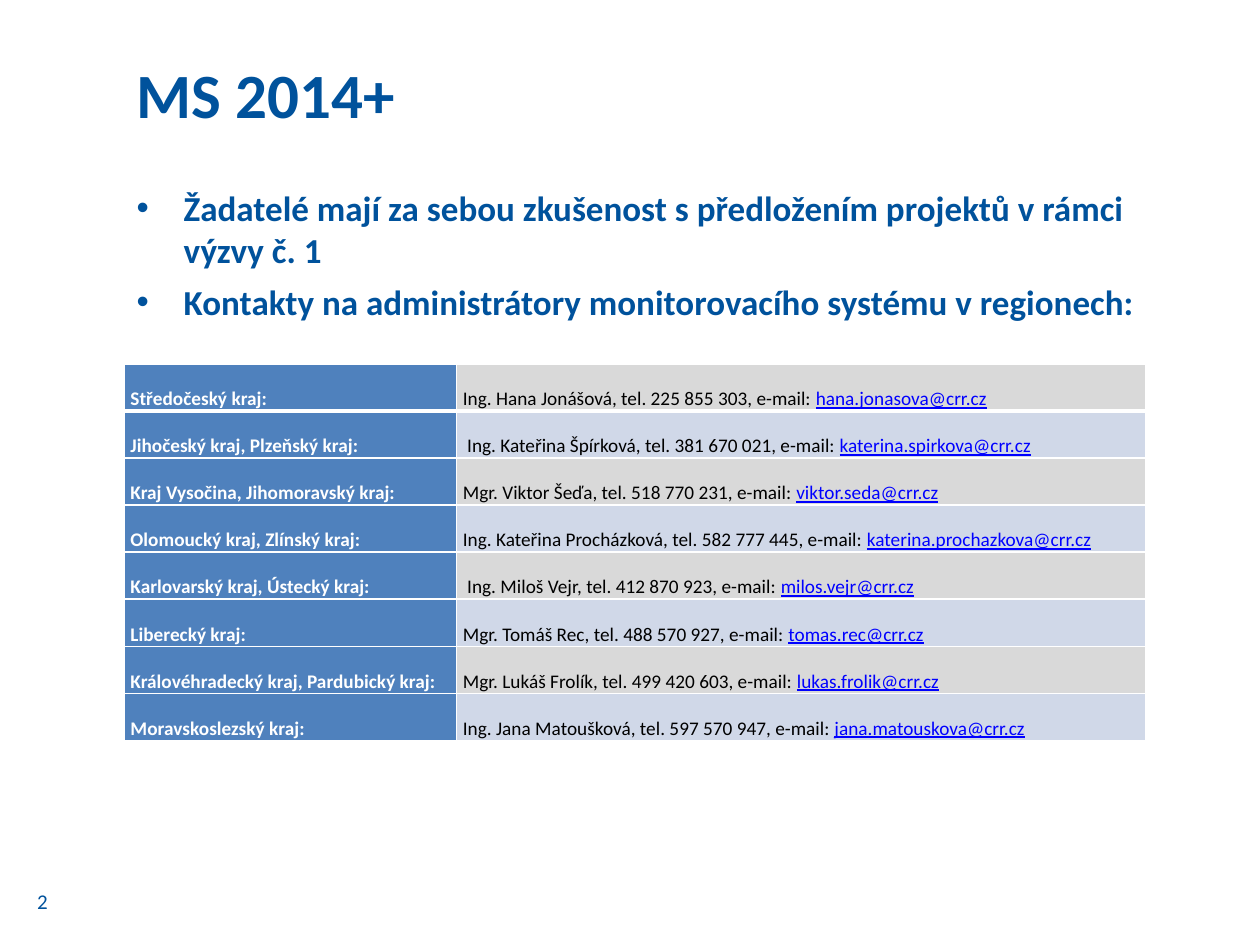
from lxml import etree
from pptx import Presentation
from pptx import util as u
from pptx.dml.color import RGBColor
from pptx.enum import text
from pptx.oxml.ns import qn

BLUE = RGBColor(0x00, 0x52, 0x9C)
HEADER_FILL = RGBColor(0x4F, 0x81, 0xBD)
BAND_FILLS = (RGBColor(0xD9, 0xD9, 0xD9), RGBColor(0xD0, 0xD8, 0xE8))
WHITE = RGBColor(0xFF, 0xFF, 0xFF)
BLACK = RGBColor(0x00, 0x00, 0x00)
LINK_BLUE = RGBColor(0x00, 0x00, 0xFF)

POINTS = (
    "Žadatelé mají za sebou zkušenost s předložením projektů v rámci výzvy č. 1",
    "Kontakty na administrátory monitorovacího systému v regionech:",
)
CONTACTS = (
    ("Středočeský kraj:", "Ing. Hana Jonášová, tel. 225 855 303", "hana.jonasova@crr.cz"),
    ("Jihočeský kraj, Plzeňský kraj:", " Ing. Kateřina Špírková, tel. 381 670 021", "katerina.spirkova@crr.cz"),
    ("Kraj Vysočina, Jihomoravský kraj:", "Mgr. Viktor Šeďa, tel. 518 770 231", "viktor.seda@crr.cz"),
    ("Olomoucký kraj, Zlínský kraj:", "Ing. Kateřina Procházková, tel. 582 777 445", "katerina.prochazkova@crr.cz"),
    ("Karlovarský kraj, Ústecký kraj:", " Ing. Miloš Vejr, tel. 412 870 923", "milos.vejr@crr.cz"),
    ("Liberecký kraj:", "Mgr. Tomáš Rec, tel. 488 570 927", "tomas.rec@crr.cz"),
    ("Královéhradecký kraj, Pardubický kraj:", "Mgr. Lukáš Frolík, tel. 499 420 603", "lukas.frolik@crr.cz"),
    ("Moravskoslezský kraj:", "Ing. Jana Matoušková, tel. 597 570 947", "jana.matouskova@crr.cz"),
)


def set_font(font, size, color, bold=False):
    font.name = "Calibri"
    font.size = u.Pt(size)
    font.bold = bold
    font.color.rgb = color


def place(shape, box):
    shape.left, shape.top, shape.width, shape.height = box


def add_title(slide, box):
    title = slide.shapes.title
    place(title, box)
    frame = title.text_frame
    frame.text = "MS 2014+"
    frame.auto_size = text.MSO_AUTO_SIZE.NONE
    frame.vertical_anchor = text.MSO_ANCHOR.MIDDLE
    paragraph = frame.paragraphs[0]
    paragraph.alignment = text.PP_ALIGN.LEFT
    set_font(paragraph.font, 36, BLUE, bold=True)


def add_points(slide, box):
    body = slide.placeholders[1]
    place(body, box)
    frame = body.text_frame
    frame.text = "\n".join(POINTS)
    frame.auto_size = text.MSO_AUTO_SIZE.NONE
    for paragraph in frame.paragraphs:
        properties = paragraph._p.get_or_add_pPr()
        properties.set("marL", str(u.Cm(0.95)))
        properties.set("indent", str(-u.Cm(0.95)))
        paragraph.space_before = u.Pt(0)
        paragraph.space_after = u.Pt(6)
        set_font(paragraph.font, 20, BLUE, bold=True)


def set_borders(cell, top, bottom):
    properties = cell._tc.get_or_add_tcPr()
    for side, width in (("L", 1), ("R", 1), ("T", top), ("B", bottom)):
        line = etree.SubElement(properties, qn(f"a:ln{side}"), w=str(u.Pt(width)))
        fill = etree.SubElement(line, qn("a:solidFill"))
        etree.SubElement(fill, qn("a:srgbClr"), val=str(WHITE))


def format_cell(cell, row, fill):
    set_borders(cell, top=3 if row == 1 else 1, bottom=3 if row == 0 else 1)
    cell.fill.solid()
    cell.fill.fore_color.rgb = fill
    cell.vertical_anchor = text.MSO_ANCHOR.BOTTOM
    cell.margin_left = cell.margin_right = u.Cm(0.13)
    cell.margin_top = cell.margin_bottom = 0


def add_contacts(slide, box):
    left, top, width, height = box
    table = slide.shapes.add_table(len(CONTACTS), 2, left, top, width, height).table
    table.first_row = table.horz_banding = False
    table.columns[0].width = u.Cm(6.7)
    table.columns[1].width = width - u.Cm(6.7)
    for row, (region, person, email) in enumerate(CONTACTS):
        region_cell, contact_cell = table.cell(row, 0), table.cell(row, 1)
        format_cell(region_cell, row, HEADER_FILL)
        format_cell(contact_cell, row, BAND_FILLS[row % 2])
        region_cell.text = region
        set_font(region_cell.text_frame.paragraphs[0].font, 11, WHITE, bold=True)
        paragraph = contact_cell.text_frame.paragraphs[0]
        for content, color in ((f"{person}, e-mail: ", BLACK), (email, LINK_BLUE)):
            run = paragraph.add_run()
            run.text = content
            set_font(run.font, 11, color)
        run.font.underline = True


def add_page_number(slide, box):
    frame = slide.shapes.add_textbox(*box).text_frame
    frame.word_wrap = True
    frame.vertical_anchor = text.MSO_ANCHOR.MIDDLE
    frame.text = "2"
    set_font(frame.paragraphs[0].font, 12, BLUE)


def main():
    presentation = Presentation()
    presentation.slide_width = u.Cm(25.4)
    presentation.slide_height = u.Cm(19.05)
    slide = presentation.slides.add_slide(presentation.slide_layouts[1])
    left, width = u.Cm(2.5), u.Cm(21.64)
    add_title(slide, (left, u.Cm(0.74), width, u.Cm(2.29)))
    add_points(slide, (left, u.Cm(3.63), width, u.Cm(13.39)))
    add_contacts(slide, (left, u.Cm(7.34), u.Cm(20.6), u.Cm(7.59)))
    add_page_number(slide, (u.Cm(0.5), u.Cm(17.65), u.Cm(1.4), u.Cm(1.02)))
    presentation.save("out.pptx")


if __name__ == "__main__":
    main()
